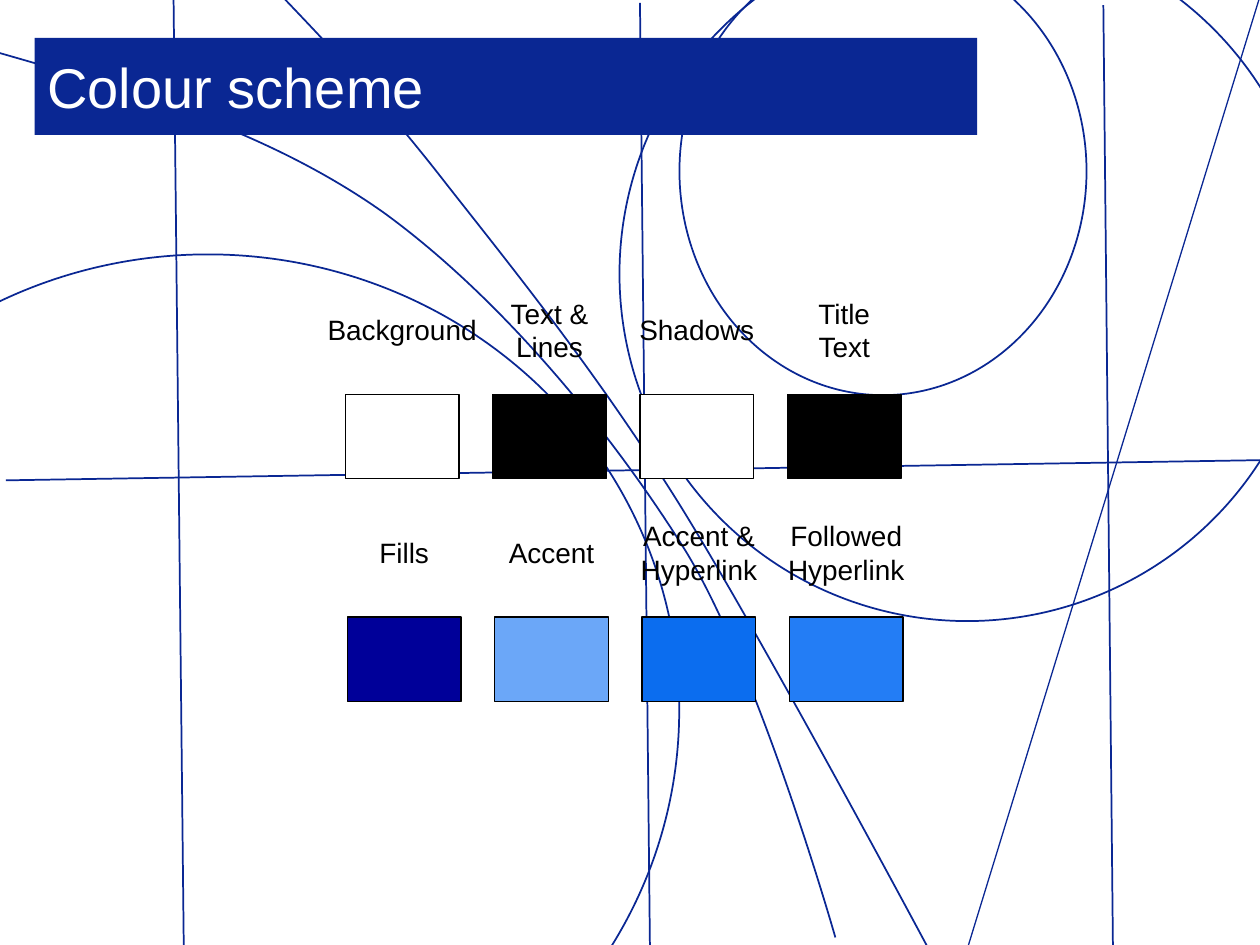
from pptx import Presentation
from pptx import util as u
from pptx.dml.color import RGBColor
from pptx.enum import shapes, text
from pptx.oxml import ns
from lxml import etree

NAVY = RGBColor(0x0A, 0x27, 0x93)
WHITE = RGBColor(0xFF, 0xFF, 0xFF)
BLACK = RGBColor(0x00, 0x00, 0x00)
DARK_BLUE = RGBColor(0x00, 0x00, 0x99)
PALE_BLUE = RGBColor(0x6B, 0xA7, 0xF8)
LINK_BLUE = RGBColor(0x0B, 0x6D, 0xEF)
VISITED_BLUE = RGBColor(0x23, 0x7D, 0xF5)

CIRCLES = [
    (388.3, -30.2, 232.6, 256),
    (354, -41.8, 397.4, 396.7),
    (-150.5, 145.4, 538.6, 521.3),
]
LINES = [
    (99.2, 0, 105, 540, 1),
    (365.7, 1.6, 371.4, 541.6, 1),
    (630.5, 2.9, 636, 542.9, 1),
    (720, -2.2, 553, 541.4, 0.75),
    (3.4, 274.5, 723.6, 262.9, 1),
]
CURVES = [
    [(-7.9, 28.1), (72.7, 51.1), (152.6, 74.2), (219.6, 121.7),
     (285.8, 169.9), (348.5, 245.5), (391.7, 314.6),
     (434.2, 383.8), (477.4, 535.7), (477.4, 535.7)],
    [(159.1, -4.3), (188.6, 26.6), (218.2, 57.6), (255.6, 105.8),
     (293, 153.4), (338.4, 209.5), (384.5, 282.2),
     (430.6, 355), (530.6, 542.2), (530.6, 542.2)],
]
SWATCH_ROWS = [
    (197.3, 225.4, [("Background", 100.1, WHITE), ("Text &\nLines", 60.5, BLACK),
                    ("Shadows", 80.5, WHITE), ("Title\vText", 45.6, BLACK)]),
    (198.5, 352.6, [("Fills", 45, DARK_BLUE), ("Accent", 64, PALE_BLUE),
                    ("Accent &\nHyperlink", 83, LINK_BLUE),
                    ("Followed\nHyperlink", 83, VISITED_BLUE)]),
]
SWATCH_PITCH = 84.2
SWATCH_WIDTH = 65
SWATCH_HEIGHT = 48.2
LABEL_RISE = 37


def write_text(frame, content, size=16, color=BLACK, align=text.PP_ALIGN.CENTER,
               font="Arial", wrap=False, auto_size=text.MSO_AUTO_SIZE.SHAPE_TO_FIT_TEXT):
    frame.text = content
    frame.word_wrap = wrap
    frame.auto_size = auto_size
    frame.vertical_anchor = text.MSO_ANCHOR.MIDDLE
    for paragraph in frame.paragraphs:
        paragraph.alignment = align
        for run in paragraph.runs:
            run.font.name = font
            run.font.size = u.Pt(size)
            run.font.color.rgb = color


def bend_segments(shape):
    segments = list(shape.element.iter(ns.qn("a:lnTo")))
    for first in range(0, len(segments), 3):
        bezier = etree.Element(ns.qn("a:cubicBezTo"))
        segments[first].addprevious(bezier)
        for segment in segments[first:first + 3]:
            bezier.append(segment[0])
            segment.getparent().remove(segment)


class SlideBuilder:
    def __init__(self, slide, line_color=NAVY, line_width=1):
        self.slide = slide
        self.line_color = line_color
        self.line_width = line_width

    def outline(self, shape, color=None, width=None):
        shape.line.color.rgb = self.line_color if color is None else color
        shape.line.width = u.Pt(width or self.line_width)

    def circle(self, *box):
        shape = self.slide.shapes.add_shape(shapes.MSO_SHAPE.OVAL, *map(u.Pt, box))
        shape.shadow.inherit = False
        shape.fill.background()
        self.outline(shape)

    def line(self, x1, y1, x2, y2, width):
        connector = self.slide.shapes.add_connector(
            shapes.MSO_CONNECTOR.STRAIGHT, *map(u.Pt, (x1, y1, x2, y2)))
        self.outline(connector, width=width)
        etree.SubElement(connector.element.spPr, ns.qn("a:effectLst"))

    def curve(self, nodes):
        start, *others = [(u.Pt(x), u.Pt(y)) for x, y in nodes]
        builder = self.slide.shapes.build_freeform(*start)
        builder.add_line_segments(others, close=False)
        shape = builder.convert_to_shape()
        bend_segments(shape)
        shape.shadow.inherit = False
        shape.fill.background()
        self.outline(shape)

    def title(self, content, left, top, width, height):
        title = self.slide.shapes.title
        title.element.getparent().append(title.element)
        title.left, title.top, title.width, title.height = map(u.Pt, (left, top, width, height))
        title.fill.solid()
        title.fill.fore_color.rgb = NAVY
        write_text(title.text_frame, content, size=32, color=WHITE, wrap=True,
                   align=text.PP_ALIGN.LEFT, auto_size=text.MSO_AUTO_SIZE.NONE)

    def swatch(self, left, top, color):
        shape = self.slide.shapes.add_shape(
            shapes.MSO_SHAPE.RECTANGLE, u.Pt(left), u.Pt(top),
            u.Pt(SWATCH_WIDTH), u.Pt(SWATCH_HEIGHT))
        shape.shadow.inherit = False
        shape.fill.solid()
        shape.fill.fore_color.rgb = color
        self.outline(shape, BLACK, 0.75)

    def label(self, content, center_x, center_y, width):
        height = 26.6 if len(content.splitlines()) == 1 else 46
        box = self.slide.shapes.add_textbox(
            u.Pt(center_x - width / 2), u.Pt(center_y - height / 2), u.Pt(width), u.Pt(height))
        write_text(box.text_frame, content)


def main():
    presentation = Presentation()
    presentation.slide_width = u.Pt(720)
    presentation.slide_height = u.Pt(540)
    slide = presentation.slides.add_slide(presentation.slide_layouts[5])
    slide.background.fill.solid()
    slide.background.fill.fore_color.rgb = WHITE
    builder = SlideBuilder(slide)

    for circle in CIRCLES:
        builder.circle(*circle)
    for line in LINES:
        builder.line(*line)
    for curve in CURVES:
        builder.curve(curve)
    builder.title("Colour scheme", 19.8, 21.7, 538.6, 55.4)
    for row_left, top, swatches in SWATCH_ROWS:
        for column, (name, label_width, color) in enumerate(swatches):
            left = row_left + column * SWATCH_PITCH
            builder.swatch(left, top, color)
            builder.label(name, left + SWATCH_WIDTH / 2, top - LABEL_RISE, label_width)

    presentation.save("out.pptx")


if __name__ == "__main__":
    main()
